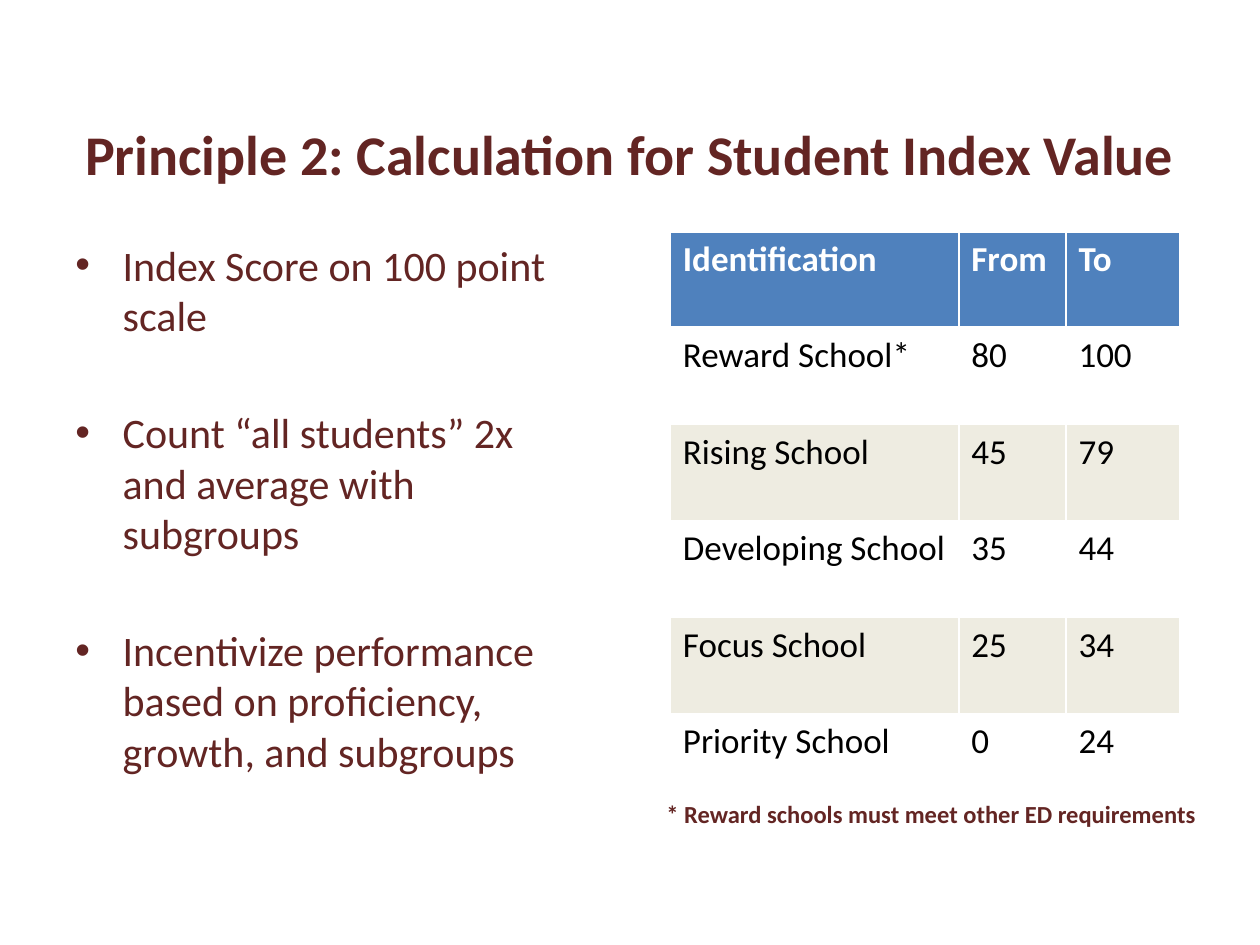
from lxml.etree import SubElement
from pptx import Presentation
from pptx.dml.color import RGBColor
from pptx.enum.text import MSO_ANCHOR, MSO_AUTO_SIZE, PP_ALIGN
from pptx.oxml.ns import qn
from pptx.util import Inches, Pt

COLORS = {"maroon": "632523", "blue": "4F81BD", "cream": "EEECE1",
          "white": "FFFFFF", "black": "000000"}
FONTS = {
    "title": {"size": Pt(32), "bold": True},
    "list": {"size": Pt(24), "bold": False},
    "head": {"size": Pt(20), "bold": True},
    "cell": {"size": Pt(20), "bold": False},
    "note": {"size": Pt(14), "bold": True},
}
POINTS = ["Index Score on 100 point scale",
          "Count “all students” 2x and average with subgroups",
          "Incentivize performance based on proficiency, growth, and subgroups"]
BANDS = [("Identification", "From", "To"),
         ("Reward School*", "80", "100"),
         ("Rising School", "45", "79"),
         ("Developing School", "35", "44"),
         ("Focus School", "25", "34"),
         ("Priority School", "0", "24")]


def color(name):
    return RGBColor.from_string(COLORS[name])


class Deck:
    """Slide style on a grid of 100 columns by 75 rows."""

    def __init__(self):
        self.file = Presentation()
        self.file.slide_width, self.file.slide_height = Inches(10), Inches(7.5)
        self.unit = self.file.slide_width / 100
        self.slide = self.file.slides.add_slide(self.file.slide_layouts[5])

    def grid(self, *cells):
        return [round(cell * self.unit) for cell in cells]

    def style(self, para, kind, tint="maroon"):
        for name, value in {"name": "Calibri", **FONTS[kind]}.items():
            setattr(para.font, name, value)
        para.font.color.rgb = color(tint)

    def title(self, text, box):
        shape = self.slide.shapes.title
        for name, value in zip(("left", "top", "width", "height"), self.grid(*box)):
            setattr(shape, name, value)
        frame = shape.text_frame
        frame.text = text
        frame.auto_size = MSO_AUTO_SIZE.NONE
        frame.vertical_anchor = MSO_ANCHOR.MIDDLE
        frame.paragraphs[0].alignment = PP_ALIGN.CENTER
        self.style(frame.paragraphs[0], "title")

    def text(self, lines, box, kind, gap=0, indent=0):
        frame = self.slide.shapes.add_textbox(*self.grid(*box)).text_frame
        frame.word_wrap = True
        frame.text = "\n".join(lines)
        for i, para in enumerate(frame.paragraphs):
            para.space_before = Pt(gap if i else 0)
            if indent:
                self.bullet(para, indent)
            self.style(para, kind)

    def bullet(self, para, indent):
        props = para._p.get_or_add_pPr()
        size = self.grid(indent)[0]
        props.set("marL", str(size))
        props.set("indent", str(-size))
        SubElement(props, qn("a:buFont")).set("typeface", "Arial")
        SubElement(props, qn("a:buChar")).set("char", "•")

    def table(self, rows, spot, widths, height):
        size = self.grid(*spot, sum(widths), height * len(rows))
        table = self.slide.shapes.add_table(len(rows), len(widths), *size).table
        for col, width in zip(table.columns, self.grid(*widths)):
            col.width = width
        for r, values in enumerate(rows):
            table.rows[r].height = self.grid(height)[0]
            kind, tint = ("cell", "black") if r else ("head", "white")
            fill = "blue" if r == 0 else "white" if r % 2 else "cream"
            for c, value in enumerate(values):
                cell = table.cell(r, c)
                cell.text = value
                self.style(cell.text_frame.paragraphs[0], kind, tint)
                self.edge(cell, {"L": 1, "R": 1, "T": 3 if r == 1 else 1,
                                 "B": 1 if r else 3})
                cell.fill.solid()
                cell.fill.fore_color.rgb = color(fill)

    def edge(self, cell, sides):
        props = cell._tc.get_or_add_tcPr()
        for side, width in sides.items():
            line = SubElement(props, qn(f"a:ln{side}"), w=str(Pt(width)))
            fill = SubElement(line, qn("a:solidFill"))
            SubElement(fill, qn("a:srgbClr")).set("val", COLORS["white"])


def main():
    deck = Deck()
    # Heading
    deck.title("Principle 2: Calculation for Student Index Value", (5, 5.9, 90, 12.5))
    # Key points on the left
    deck.text(POINTS, (5, 18.5, 42.6, 49.5), "list", gap=38, indent=3.75)
    # Score bands on the right, with their footnote
    deck.table(BANDS, (53.2, 18.4), (22.9, 8.5, 9), 7.65)
    deck.text(["* Reward schools must meet other ED requirements"],
              (51.9, 62.9, 45.1, 6.4), "note")
    deck.file.save("out.pptx")


if __name__ == "__main__":
    main()
